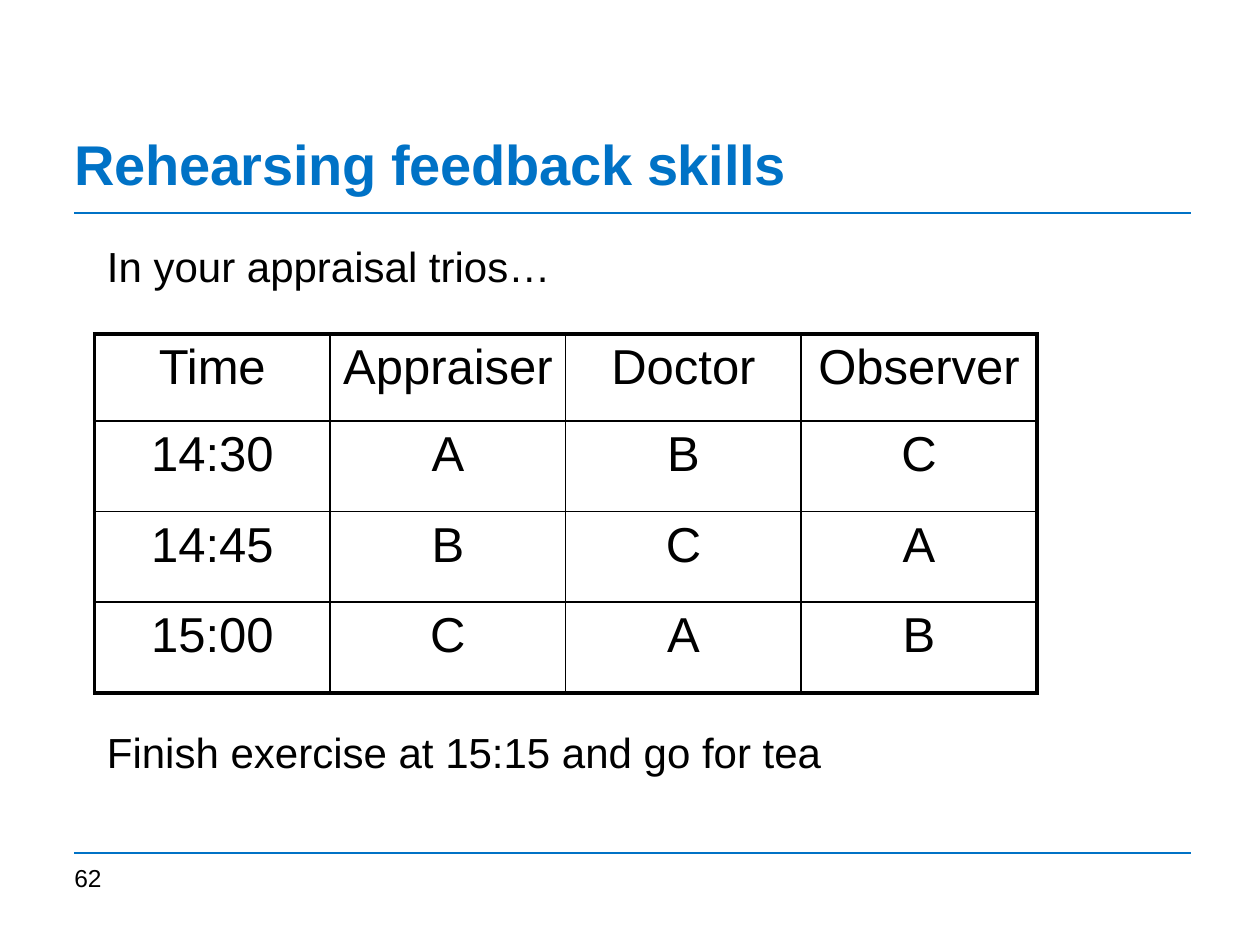
from lxml import etree
from pptx import Presentation
from pptx import util as u
from pptx.dml.color import RGBColor
from pptx.enum import shapes, text
from pptx.oxml.ns import qn

BLUE, BLACK = "0072C6", "000000"
THICK, THIN = 2.25, 1


def rgb(value):
    return RGBColor.from_string(value)


class Deck:
    """Holds the style and the current slide."""
    font = "Arial"

    def __init__(self, prs):
        self.s = prs.slides.add_slide(prs.slide_layouts[5])

    def style(self, p, size, color=BLACK, bold=False):
        f = p.font
        f.name, f.size, f.bold = self.font, u.Pt(size), bold
        f.color.rgb = rgb(color)

    def no_margins(self, tf):
        tf.margin_left = tf.margin_right = tf.margin_top = tf.margin_bottom = 0

    def title(self, words, x, y, w, h):
        sp = self.s.shapes.title
        sp.left, sp.top, sp.width, sp.height = map(u.Inches, (x, y, w, h))
        tf = sp.text_frame
        self.no_margins(tf)
        tf.word_wrap = True
        tf.vertical_anchor = text.MSO_ANCHOR.BOTTOM
        p = tf.paragraphs[0]
        r = p.add_run()
        r.text = words
        r._r.get_or_add_rPr().set("spc", "-20")
        p.alignment, p.line_spacing = text.PP_ALIGN.LEFT, 0.9
        self.style(p, 32, BLUE, True)

    def rule(self, x1, x2, y):
        ln = self.s.shapes.add_connector(
            shapes.MSO_CONNECTOR.STRAIGHT, *map(u.Inches, (x1, y, x2, y)))
        ln.line.color.rgb, ln.line.width = rgb(BLUE), u.Pt(1.25)
        etree.SubElement(ln._element.spPr, qn("a:effectLst"))

    def label(self, words, x, y, w, h, size, margins=True):
        tf = self.s.shapes.add_textbox(*map(u.Inches, (x, y, w, h))).text_frame
        tf.word_wrap = True
        if not margins:
            self.no_margins(tf)
        p = tf.paragraphs[0]
        p.text = words
        self.style(p, size)

    def borders(self, cell, widths):
        tcPr = cell._tc.get_or_add_tcPr()
        # Border lines come before the fill in the cell properties
        for i, (side, width) in enumerate(widths.items()):
            ln = etree.Element(qn("a:ln" + side), w=str(u.Pt(width)))
            fill = etree.SubElement(ln, qn("a:solidFill"))
            etree.SubElement(fill, qn("a:srgbClr"), val=BLACK)
            tcPr.insert(i, ln)

    def table(self, rows, x, y, col_w, row_hs, size):
        nr, nc = len(rows), len(rows[0])
        frame = self.s.shapes.add_table(
            nr, nc, *map(u.Inches, (x, y, col_w * nc, sum(row_hs))))
        tbl = frame.table
        tbl.first_row = tbl.horz_banding = False
        for col in tbl.columns:
            col.width = u.Inches(col_w)
        for i, row in enumerate(rows):
            tbl.rows[i].height = u.Inches(row_hs[i])
            for j, words in enumerate(row):
                cell = tbl.cell(i, j)
                cell.fill.background()
                cell.margin_left = cell.margin_right = u.Inches(0.08)
                p = cell.text_frame.paragraphs[0]
                p.text, p.alignment = words, text.PP_ALIGN.CENTER
                self.style(p, size)
                edges = {"L": j == 0, "R": j == nc - 1,
                         "T": i == 0, "B": i == nr - 1}
                self.borders(cell, {k: THICK if outer else THIN
                                    for k, outer in edges.items()})


def main():
    prs = Presentation()
    prs.slide_width, prs.slide_height = u.Inches(10), u.Inches(7.5)
    d = Deck(prs)

    # Title and the two rules
    for y in (1.69, 6.77):
        d.rule(0.59, 9.45, y)
    d.title("Rehearsing feedback skills", 0.59, 0.59, 8.82, 0.98)

    # Rota: the roles rotate by one each round
    roles = "ABC"
    rota = [["Time", "Appraiser", "Doctor", "Observer"]]
    for i, time in enumerate(("14:30", "14:45", "15:00")):
        rota.append([time, *roles[i:], *roles[:i]])
    d.table(rota, 0.75, 2.65, 1.87, [0.69, 0.72, 0.72, 0.72], 28)

    # Page number and instructions
    d.label("62", 0.59, 6.85, 8.86, 0.4, 14, margins=False)
    d.label("Finish exercise at 15:15 and go for tea", 0.75, 5.72, 7.52, 0.91, 24)
    d.label("In your appraisal trios…", 0.75, 1.86, 7.52, 0.91, 24)

    prs.save("out.pptx")


if __name__ == "__main__":
    main()
